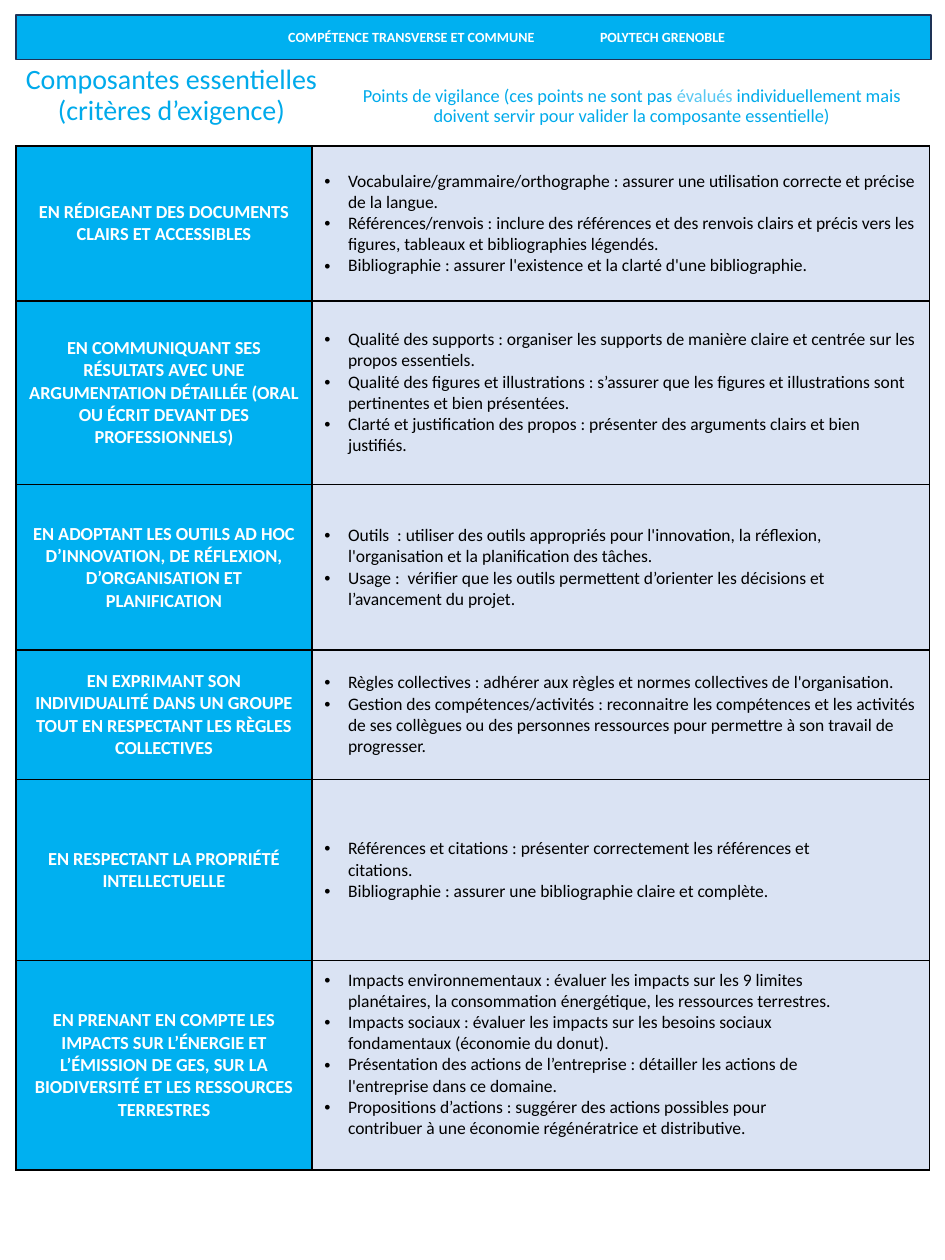
"""Build the one-page grid of criteria for the transverse competence."""
from lxml import etree
from pptx import Presentation
from pptx import util as u
from pptx.dml.color import RGBColor
from pptx.enum import shapes, text
from pptx.oxml.ns import qn

THEME = {
    "font": "Calibri",
    "blue": "00B0F0", "navy": "1E3256", "pale": "DAE3F3", "white": "FFFFFF",
    "black": "000000", "heading": "00AAEB", "light": "57C7F2",
    "banner": 8, "title": 16, "label": 10.5, "body": 10,
}
BANNER = "\t COMPÉTENCE TRANSVERSE ET COMMUNE \tPOLYTECH GRENOBLE"
TITLE = "Composantes essentielles (critères d’exigence)"
VIGILANCE = [
    ("Points de vigilance (ces points ne sont pas ", "heading"),
    ("évalués", "light"),
    (" individuellement mais doivent servir pour valider la composante essentielle)", "heading"),
]
CRITERIA = [
    {"height": 88.5, "label": "EN RÉDIGEANT DES DOCUMENTS CLAIRS ET ACCESSIBLES", "points": [
        "Vocabulaire/grammaire/orthographe : assurer une utilisation correcte et précise de la langue.",
        "Références/renvois : inclure des références et des renvois clairs et précis vers les figures, "
        "tableaux et bibliographies légendés.",
        "Bibliographie : assurer l'existence et la clarté d'une bibliographie."]},
    {"height": 105, "label": "EN COMMUNIQUANT SES RÉSULTATS AVEC UNE ARGUMENTATION DÉTAILLÉE "
                             "(ORAL OU ÉCRIT DEVANT DES PROFESSIONNELS)", "points": [
        "Qualité des supports : organiser les supports de manière claire et centrée sur les propos essentiels.",
        "Qualité des figures et illustrations : s’assurer que les figures et illustrations sont "
        "pertinentes et bien présentées.",
        "Clarté et justification des propos : présenter des arguments clairs et bien justifiés."]},
    {"height": 94.5, "label": "EN ADOPTANT LES OUTILS AD HOC D’INNOVATION, DE RÉFLEXION, "
                              "D’ORGANISATION ET PLANIFICATION", "points": [
        "Outils  : utiliser des outils appropriés pour l'innovation, la réflexion, "
        "l'organisation et la planification des tâches.",
        "Usage :  vérifier que les outils permettent d’orienter les décisions et l’avancement du projet."]},
    {"height": 74, "label": "EN EXPRIMANT SON INDIVIDUALITÉ DANS UN GROUPE TOUT EN RESPECTANT "
                            "LES RÈGLES COLLECTIVES", "points": [
        "Règles collectives : adhérer aux règles et normes collectives de l'organisation.",
        "Gestion des compétences/activités : reconnaitre les compétences et les activités de ses "
        "collègues ou des personnes ressources pour permettre à son travail de progresser."]},
    {"height": 103.5, "right": 45, "label": "EN RESPECTANT LA PROPRIÉTÉ INTELLECTUELLE", "points": [
        "Références et citations : présenter correctement les références et citations.",
        "Bibliographie : assurer une bibliographie claire et complète."]},
    {"height": 119.5, "right": 45, "bottom": 16,
     "label": "EN PRENANT EN COMPTE LES IMPACTS SUR L’ÉNERGIE ET L’ÉMISSION DE GES, "
              "SUR LA BIODIVERSITÉ ET LES RESSOURCES TERRESTRES", "points": [
        "Impacts environnementaux : évaluer les impacts sur les 9 limites planétaires, "
        "la consommation énergétique, les ressources terrestres.",
        "Impacts sociaux : évaluer les impacts sur les besoins sociaux fondamentaux (économie du donut).",
        "Présentation des actions de l’entreprise : détailler les actions de l'entreprise dans ce domaine.",
        "Propositions d’actions : suggérer des actions possibles pour contribuer à une économie "
        "régénératrice et distributive."]},
]
COLUMNS = (169, 353)
LEFT, TABLE_TOP = 9.25, 83.5
INDENT = 13.5


def color(name):
    return RGBColor.from_string(THEME[name])


def write(para, content, *, size, ink="black", bold=False, align=None, spacing=None, after=None):
    """Write a string, or (string, colour) spans, into a paragraph."""
    para.alignment = align
    para.line_spacing = spacing
    para.space_before = u.Pt(0)
    if after is not None:
        para.space_after = u.Pt(after)
    for words, tint in [(content, ink)] if isinstance(content, str) else content:
        span = para.add_run()
        span.text = words
        span.font.name, span.font.size = THEME["font"], u.Pt(THEME[size])
        span.font.bold = bold
        span.font.color.rgb = color(tint)


def place(shape, left, top, width, height):
    shape.left, shape.top, shape.width, shape.height = map(u.Pt, (left, top, width, height))


def add_bullet(para, right):
    props = para._p.get_or_add_pPr()
    for key, points in (("marL", INDENT), ("marR", right), ("indent", -INDENT)):
        props.set(key, str(u.Pt(points)))
    etree.SubElement(props, qn("a:buFont")).set("typeface", "Arial")
    etree.SubElement(props, qn("a:buChar")).set("char", "•")


def style_cell(cell, fill):
    props = cell._tc.get_or_add_tcPr()
    for side in ("lnL", "lnR", "lnT", "lnB"):
        line = etree.SubElement(props, qn(f"a:{side}"), w=str(u.Pt(1)))
        paint = etree.SubElement(line, qn("a:solidFill"))
        etree.SubElement(paint, qn("a:srgbClr")).set("val", THEME["black"])
    cell.fill.solid()
    cell.fill.fore_color.rgb = color(fill)
    cell.vertical_anchor = text.MSO_ANCHOR.MIDDLE


def add_banner(page):
    box = page.shapes.add_shape(shapes.MSO_SHAPE.RECTANGLE, 0, 0, 0, 0)
    place(box, LEFT, 8.5, 523, 25.5)
    box.shadow.inherit = False
    box.fill.solid()
    box.fill.fore_color.rgb = color("blue")
    box.line.color.rgb, box.line.width = color("navy"), u.Pt(1)
    box.text_frame.vertical_anchor = text.MSO_ANCHOR.MIDDLE
    write(box.text_frame.paragraphs[0], BANNER, size="banner", ink="white", bold=True,
          align=text.PP_ALIGN.CENTER)


def add_heading(box, content, size, area):
    place(box, *area)
    frame = box.text_frame
    frame.word_wrap, frame.auto_size = True, text.MSO_AUTO_SIZE.NONE
    frame.vertical_anchor = text.MSO_ANCHOR.TOP
    write(frame.paragraphs[0], content, size=size, ink="heading", spacing=0.9,
          align=text.PP_ALIGN.CENTER)


def add_criteria(page):
    total = sum(row["height"] for row in CRITERIA)
    frame = page.shapes.add_table(len(CRITERIA), len(COLUMNS), u.Pt(LEFT), u.Pt(TABLE_TOP),
                                  u.Pt(sum(COLUMNS)), u.Pt(total))
    table = frame.table
    table.first_row = table.horz_banding = False
    for column, width in zip(table.columns, COLUMNS):
        column.width = u.Pt(width)
    for row, item in zip(table.rows, CRITERIA):
        row.height = u.Pt(item["height"])
        label, details = row.cells
        style_cell(label, "blue")
        write(label.text_frame.paragraphs[0], item["label"], size="label", ink="white", bold=True,
              align=text.PP_ALIGN.CENTER, after=6)
        style_cell(details, "pale")
        details.margin_bottom = u.Pt(item.get("bottom", 3.6))
        for index, point in enumerate(item["points"]):
            body = details.text_frame
            para = body.add_paragraph() if index else body.paragraphs[0]
            add_bullet(para, item.get("right", 0))
            write(para, point, size="body")


def main():
    deck = Presentation()
    deck.slide_width, deck.slide_height = u.Pt(540), u.Pt(720)
    page = deck.slides.add_slide(deck.slide_layouts[5])
    add_banner(page)
    add_heading(page.shapes.title, TITLE, "title", (-5, 34, 206, 42.5))
    add_criteria(page)
    add_heading(page.shapes.add_textbox(0, 0, 0, 0), VIGILANCE, "label", (190.5, 46, 341, 30))
    deck.save("out.pptx")


if __name__ == "__main__":
    main()
